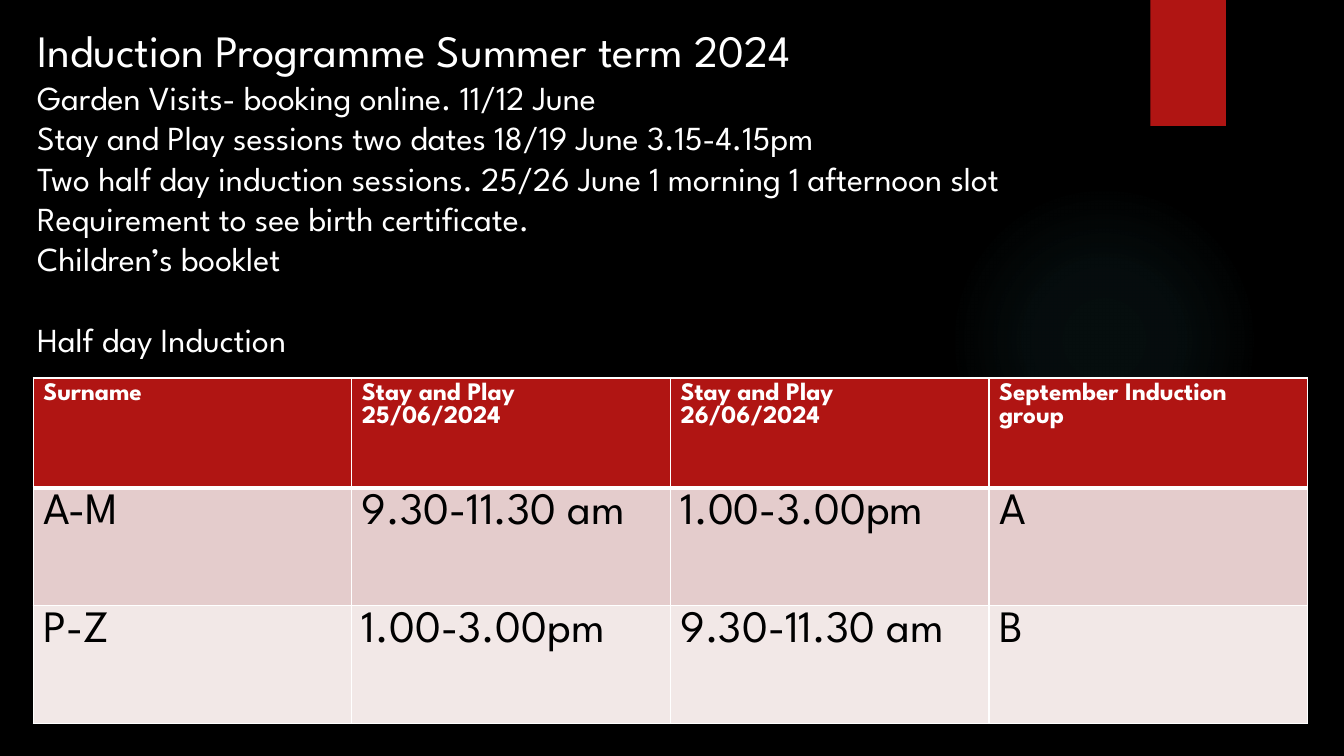
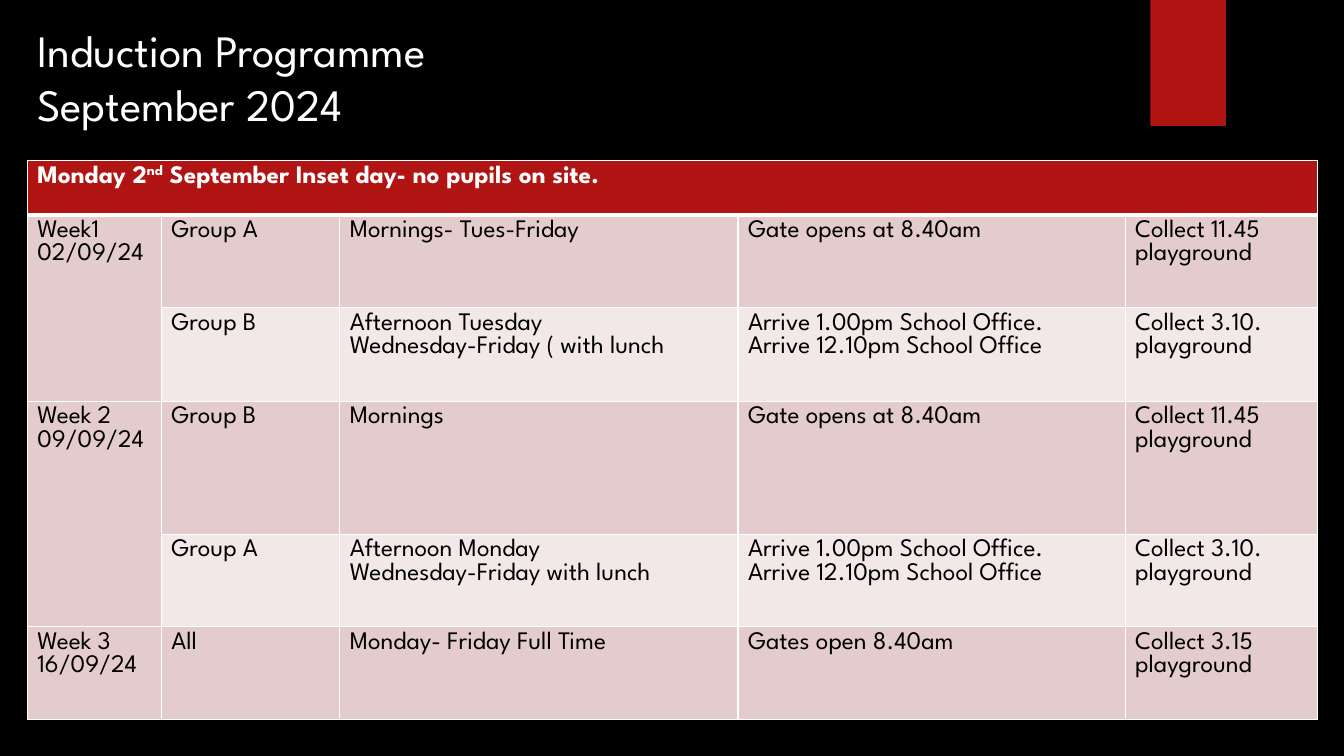
import pptx
import pptx.dml.color
import pptx.enum.shapes
import pptx.oxml
import pptx.oxml.ns
import pptx.util

Inches = pptx.util.Inches
Pt = pptx.util.Pt
RGBColor = pptx.dml.color.RGBColor
SHAPES = pptx.enum.shapes.MSO_SHAPE

BLACK = RGBColor(0x00, 0x00, 0x00)
WHITE = RGBColor(0xFF, 0xFF, 0xFF)
RED = RGBColor(0xB0, 0x15, 0x13)
ROSE = RGBColor(0xE4, 0xCC, 0xCC)
PALE_ROSE = RGBColor(0xF2, 0xE8, 0xE7)
GLOW = RGBColor(0x50, 0xB9, 0xC1)
GLOW_STOPS = ((0, 7), (36, 6), (69, 0))
FONT = "League Spartan"
TITLE_SIZE, BODY_SIZE, TABLE_SIZE = 32, 24, 18

SUMMER_LINES = (
    "Garden Visits- booking online. 11/12 June",
    "Stay and Play sessions two dates 18/19 June 3.15-4.15pm",
    "Two half day induction sessions. 25/26 June 1 morning 1 afternoon slot",
    "Requirement to see birth certificate.",
    "Children’s booklet",
)
SUMMER_ROWS = (
    ("Surname", "Stay and Play\n25/06/2024", "Stay and Play\n26/06/2024", "September Induction group"),
    ("A-M", "9.30-11.30 am", "1.00-3.00pm", "A"),
    ("P-Z", "1.00-3.00pm", "9.30-11.30 am", "B"),
)
ARRIVALS = "Arrive 1.00pm School Office.\nArrive 12.10pm School Office"
MORNING_GATE = "Gate opens at 8.40am"
MORNING_COLLECT = "Collect 11.45 playground"
AFTERNOON_COLLECT = "Collect 3.10. playground"
SEPTEMBER_ROWS = (
    ("Monday 2^nd^ September Inset day- no pupils on site.", "", "", "", ""),
    ("Week1\n02/09/24", "Group A", "Mornings- Tues-Friday", MORNING_GATE, MORNING_COLLECT),
    ("", "Group B", "Afternoon Tuesday\nWednesday-Friday ( with lunch", ARRIVALS, AFTERNOON_COLLECT),
    ("Week 2\n09/09/24", "Group B", "Mornings", MORNING_GATE, MORNING_COLLECT),
    ("", "Group A", "Afternoon Monday\nWednesday-Friday with lunch", ARRIVALS, AFTERNOON_COLLECT),
    ("Week 3\n16/09/24", "All", "Monday- Friday Full Time", "Gates open 8.40am", "Collect 3.15 playground"),
)
SEPTEMBER_MERGES = (((0, 0), (0, 4)), ((1, 0), (2, 0)), ((3, 0), (4, 0)))


def add_span(para, text, size, color, bold=False, raised=False):
    """Add one run in the deck font, optionally as superscript."""
    span = para.add_run()
    span.text = text
    span.font.name = FONT
    span.font.size = Pt(size)
    span.font.bold = bold
    span.font.color.rgb = color
    if raised:
        span.font._element.set("baseline", "30000")


def add_paragraph(frame, index):
    """Return the first paragraph of a frame, or a new one after it."""
    return frame.add_paragraph() if index else frame.paragraphs[0]


def add_glow(page, left, top, size):
    """Draw a faint round glow that fades towards its edge."""
    glow = page.shapes.add_shape(SHAPES.OVAL, Inches(left), Inches(top), Inches(size), Inches(size))
    glow.shadow.inherit = False
    glow.line.fill.background()
    glow.fill.background()
    stops = "".join(
        f'<a:gs pos="{place * 1000}"><a:srgbClr val="{GLOW}"><a:alpha val="{alpha * 1000}"/></a:srgbClr></a:gs>'
        for place, alpha in GLOW_STOPS
    )
    gradient = pptx.oxml.parse_xml(
        f'<a:gradFill {pptx.oxml.ns.nsdecls("a")}><a:gsLst>{stops}</a:gsLst><a:path path="circle">'
        '<a:fillToRect l="50000" t="50000" r="50000" b="50000"/></a:path></a:gradFill>'
    )
    properties = glow._element.spPr
    properties.replace(properties.find(pptx.oxml.ns.qn("a:noFill")), gradient)


def add_ribbon(page, left, top, width, height):
    """Hang the red ribbon from the top edge."""
    ribbon = page.shapes.add_shape(SHAPES.RECTANGLE, Inches(left), Inches(top), Inches(width), Inches(height))
    ribbon.shadow.inherit = False
    ribbon.fill.solid()
    ribbon.fill.fore_color.rgb = RED
    ribbon.line.fill.background()


def add_page(deck):
    """Add a blank page with the shared ribbon."""
    page = deck.slides.add_slide(deck.slide_layouts[6])
    add_ribbon(page, 11.41, 0, 0.75, 1.25)
    return page


def add_heading(page, height, lines):
    """Write the heading block from (text, size, space before) lines."""
    box = page.shapes.add_textbox(Inches(0.27), Inches(0.18), Inches(12.73), Inches(height))
    box.text_frame.word_wrap = True
    for index, (text, size, gap) in enumerate(lines):
        para = add_paragraph(box.text_frame, index)
        if gap:
            para.space_before = Pt(gap)
        add_span(para, text, size, WHITE)


def set_borders(cell, widths):
    """Give a cell white borders, with widths in points by side."""
    properties = cell._tc.get_or_add_tcPr()
    for index, (side, width) in enumerate(widths.items()):
        properties.insert(index, pptx.oxml.parse_xml(
            f'<a:ln{side} {pptx.oxml.ns.nsdecls("a")} w="{Pt(width)}">'
            f'<a:solidFill><a:srgbClr val="{WHITE}"/></a:solidFill></a:ln{side}>'
        ))


def style_cell(cell, row, fill):
    """Fill a cell and draw its borders, thicker below the header."""
    cell.fill.solid()
    cell.fill.fore_color.rgb = fill
    set_borders(cell, {"L": 1, "R": 1, "T": 3 if row == 1 else 1, "B": 3 if row == 0 else 1})


def write_cell(cell, text, size, color, bold):
    """Write cell lines, raising the parts between carets."""
    for index, line in enumerate(text.split("\n")):
        para = add_paragraph(cell.text_frame, index)
        for part, words in enumerate(line.split("^")):
            add_span(para, words, size, color, bold, raised=part % 2 == 1)


def add_schedule(page, left, top, widths, heights, rows, body_size, merges=()):
    """Build a schedule table with a red header and banded rows."""
    frame = page.shapes.add_table(
        len(rows), len(widths), Inches(left), Inches(top), Inches(sum(widths)), Inches(sum(heights))
    )
    table = frame.table
    table.first_row = table.horz_banding = False
    for column, width in zip(table.columns, widths):
        column.width = Inches(width)
    for start, end in merges:
        table.cell(*start).merge(table.cell(*end))
    for row, (height, texts) in enumerate(zip(heights, rows)):
        table.rows[row].height = Inches(height)
        header = row == 0
        fill = RED if header else (ROSE if row % 2 else PALE_ROSE)
        for column, text in enumerate(texts):
            cell = table.cell(row, column)
            style_cell(cell, row, fill)
            if text:
                write_cell(cell, text, TABLE_SIZE if header else body_size, WHITE if header else BLACK, header)


def build_summer(deck):
    """Build the summer term page."""
    page = add_page(deck)
    add_glow(page, 9.41, 1.83, 3.08)
    lines = [("Induction Programme Summer term 2024", TITLE_SIZE, 0)]
    lines += [(line, BODY_SIZE, 0) for line in SUMMER_LINES]
    lines.append(("Half day Induction", BODY_SIZE, 28.8))
    add_heading(page, 3.5, lines)
    add_schedule(page, 0.33, 3.75, [3.16] * 4, [1.09, 1.17, 1.17], SUMMER_ROWS, TITLE_SIZE)


def build_september(deck):
    """Build the September page."""
    page = add_page(deck)
    add_heading(page, 1.3, [("Induction Programme", TITLE_SIZE, 0), ("September 2024", TITLE_SIZE, 0)])
    add_schedule(
        page, 0.27, 1.59, [1.33, 1.77, 3.95, 3.84, 1.91], [0.54, 0.92, 0.93, 1.32, 0.92, 0.92],
        SEPTEMBER_ROWS, TABLE_SIZE, SEPTEMBER_MERGES,
    )


def main():
    """Create and save the deck."""
    deck = pptx.Presentation()
    deck.slide_width, deck.slide_height = Inches(13.33), Inches(7.5)
    background = deck.slide_master.background.fill
    background.solid()
    background.fore_color.rgb = BLACK
    build_summer(deck)
    build_september(deck)
    deck.save("out.pptx")


if __name__ == "__main__":
    main()
